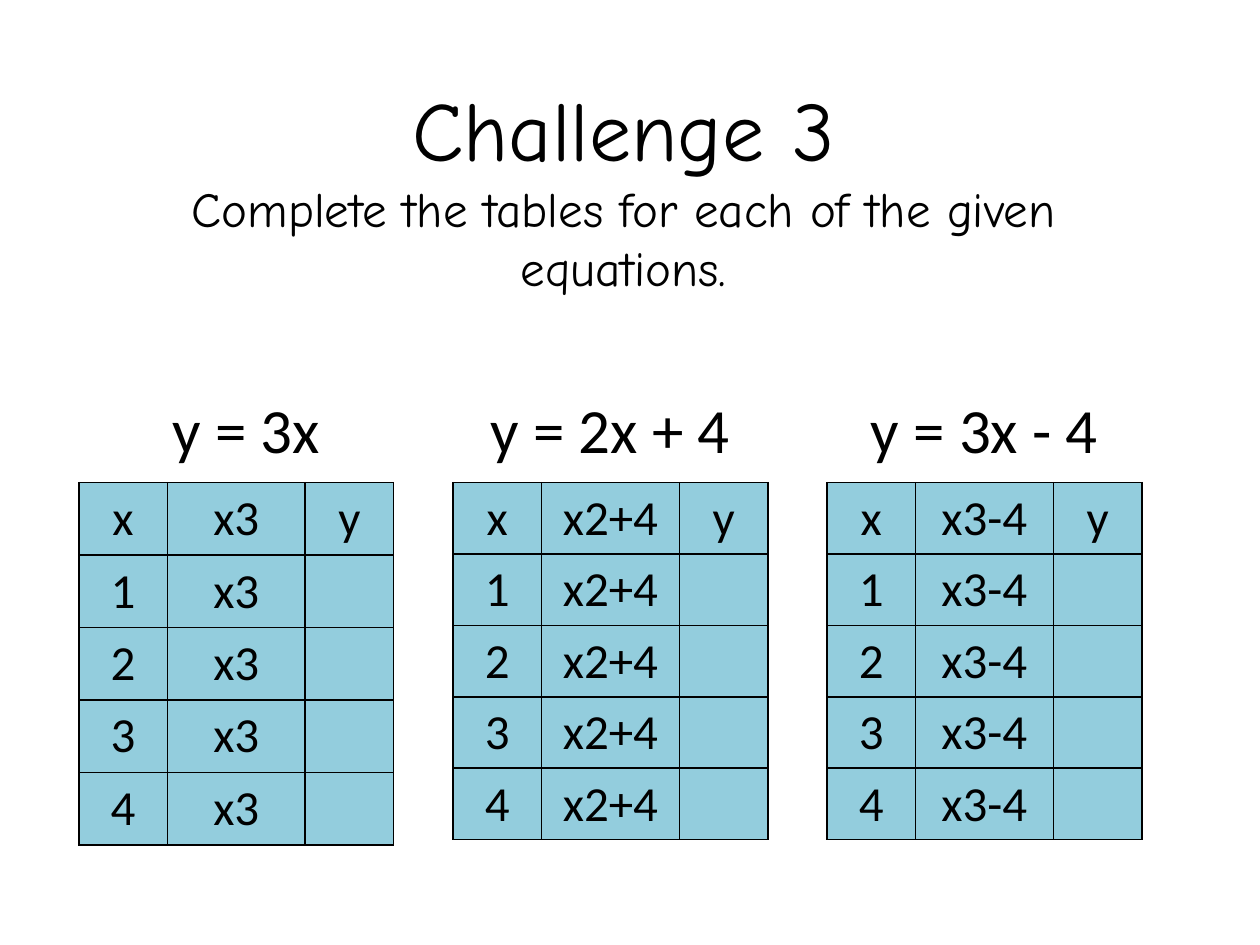
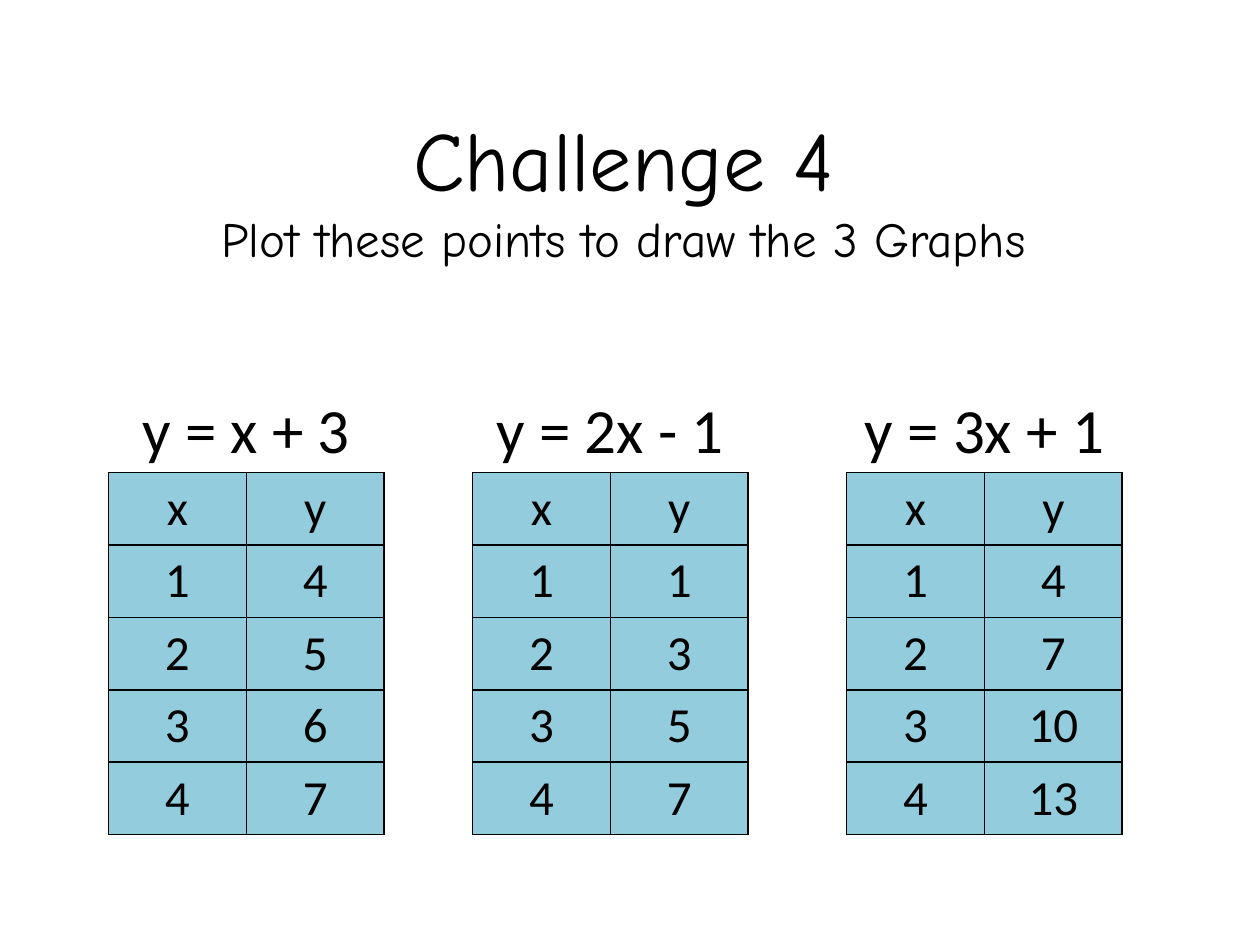
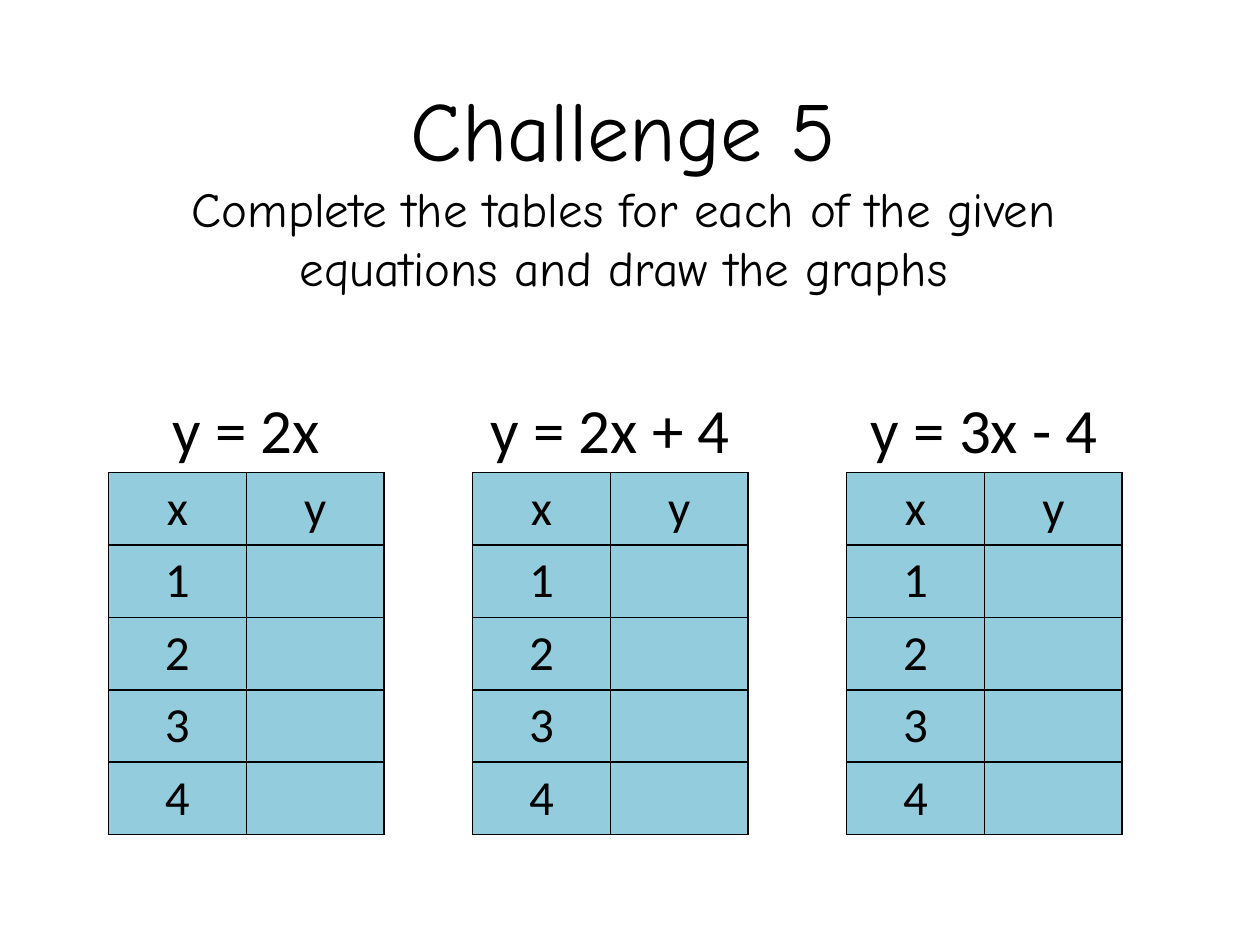
from pptx import Presentation
from pptx.dml.color import RGBColor
from pptx.enum.text import MSO_ANCHOR, PP_ALIGN
from pptx.oxml import parse_xml
from pptx.oxml.ns import nsdecls
from pptx.util import Pt

CENTER = PP_ALIGN.CENTER
MIDDLE, TOP = MSO_ANCHOR.MIDDLE, MSO_ANCHOR.TOP

BLACK, AQUA = "000000", "93CDDD"
HEAD = {"name": "Comic Neue", "size": Pt(48)}
TASK = {"name": "Comic Neue", "size": Pt(28)}
RULE = {"name": "Calibri", "size": Pt(36)}
CELL = {"name": "Calibri", "size": Pt(28)}
PAD = {"margin_top": Pt(3.6), "margin_bottom": Pt(3),
       "margin_left": Pt(7.2), "margin_right": Pt(7.2)}

TITLE_BOX = (44.6, 33.8, 623.5, 146.2)
RULE_TOP, RULE_WIDE, RULE_HIGH = 219.6, 157.5, 51
RULE_LEFTS = (62, 270, 483.8)
WIDE = {"lefts": (45, 258.8, 472.5), "top": 275.8,
        "cols": (50.6, 78.8, 50.6), "rows": (41.4, 40.8, 40.8)}
PAIR = {"lefts": RULE_LEFTS, "top": 270,
        "cols": (78.75, 78.75), "rows": (41.4, 41.4, 41.4)}

XS = (1, 2, 3, 4)
BLANK = ("",) * len(XS)

# Each table: its equation, the step column if any, the y values
SLIDES = [
    ("Challenge 3", "Complete the tables for each of the given equations.", WIDE,
     [("y = 3x", "x3", BLANK),
      ("y = 2x + 4", "x2+4", BLANK),
      ("y = 3x - 4", "x3-4", BLANK)]),
    ("Challenge 4", "Plot these points to draw the 3 Graphs", PAIR,
     [("y = x + 3", None, (4, 5, 6, 7)),
      ("y = 2x - 1", None, (1, 3, 5, 7)),
      ("y = 3x + 1", None, (4, 7, 10, 13))]),
    ("Challenge 5",
     "Complete the tables for each of the given equations and draw the graphs", PAIR,
     [("y = 2x", None, BLANK),
      ("y = 2x + 4", None, BLANK),
      ("y = 3x - 4", None, BLANK)]),
]


def color(code):
    return RGBColor.from_string(code)


def assign(item, values):
    for key, value in values.items():
        setattr(item, key, value)


def write(para, text, font):
    para.alignment = CENTER
    run = para.add_run()
    run.text = str(text)
    assign(run.font, font)
    run.font.color.rgb = color(BLACK)


def add_text(slide, box, lines, anchor):
    frame = slide.shapes.add_textbox(*map(Pt, box)).text_frame
    assign(frame, {"word_wrap": True, "vertical_anchor": anchor})
    for i, (text, font) in enumerate(lines):
        para = frame.add_paragraph() if i else frame.paragraphs[0]
        write(para, text, font)


def outline(cell):
    props = cell._tc.get_or_add_tcPr()
    for i, side in enumerate(("lnL", "lnR", "lnT", "lnB")):
        props.insert(i, parse_xml(
            f'<a:{side} {nsdecls("a")} w="{Pt(1)}"><a:solidFill>'
            f'<a:srgbClr val="{BLACK}"/></a:solidFill></a:{side}>'))


def add_grid(slide, left, top, widths, height, rows):
    shape = slide.shapes.add_table(len(rows), len(widths), Pt(left), Pt(top),
                                   Pt(sum(widths)), Pt(height * len(rows)))
    grid = shape.table
    assign(grid, {"first_row": False, "horz_banding": False})
    for col, width in zip(grid.columns, widths):
        col.width = Pt(width)
    for row, values in zip(grid.rows, rows):
        row.height = Pt(height)
        for cell, value in zip(row.cells, values):
            assign(cell, PAD)
            cell.fill.solid()
            cell.fill.fore_color.rgb = color(AQUA)
            outline(cell)
            if value != "":
                write(cell.text_frame.paragraphs[0], value, CELL)


def fill_rows(step, ys):
    pairs = [("x", "y"), *zip(XS, ys)]
    return [(x, step, y) if step else (x, y) for x, y in pairs]


def main():
    deck = Presentation()
    deck.slide_width, deck.slide_height = Pt(720), Pt(540)
    for title, task, plan, tables in SLIDES:
        slide = deck.slides.add_slide(deck.slide_layouts[6])
        add_text(slide, TITLE_BOX, [(title, HEAD), (task, TASK)], MIDDLE)
        for i, (rule, step, ys) in enumerate(tables):
            add_grid(slide, plan["lefts"][i], plan["top"], plan["cols"],
                     plan["rows"][i], fill_rows(step, ys))
            box = (RULE_LEFTS[i], RULE_TOP, RULE_WIDE, RULE_HIGH)
            add_text(slide, box, [(rule, RULE)], TOP)
    deck.save("out.pptx")


if __name__ == "__main__":
    main()
